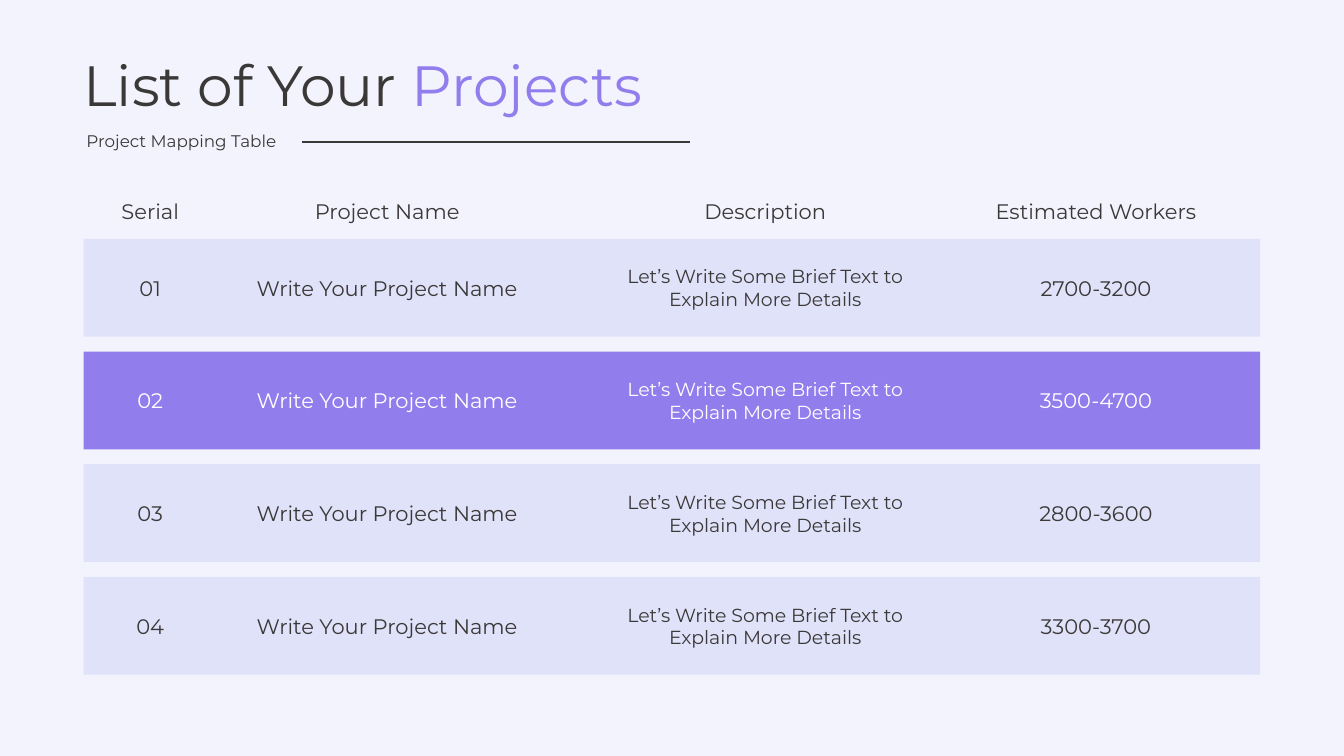
import pptx
import pptx.dml.color
import pptx.enum.shapes
import pptx.enum.text
import pptx.util
from lxml import etree
from pptx.util import Inches

COLORS = {
    "background": "F3F3FD",
    "ink": "3B3838",
    "accent": "917DEC",
    "row": "E0E2F9",
    "white": "FFFFFF",
}
FONT = "Montserrat"
# Centre and width of each column, measured from the left edge of the list
COLUMNS = [(0.66, 0.83), (3.01, 3.01), (6.76, 3.15), (10.04, 2.38)]
HEADINGS = ["Serial", "Project Name", "Description", "Estimated Workers"]
PROJECT_NAME = "Write Your Project Name"
DESCRIPTION = ["Let’s Write Some Brief Text to", "Explain More Details"]
WORKERS = ["2700-3200", "3500-4700", "2800-3600", "3300-3700"]
HIGHLIGHTED_ROW = 1
ROW_HEIGHT = 0.97
ROW_PITCH = 1.118
HEADING_HEIGHT = 0.35
HEADING_TO_ROWS = 0.45


def rgb(name):
    return pptx.dml.color.RGBColor.from_string(COLORS[name])


def add_text(shapes, box, lines, size, centered=False):
    """Add a text box; each line is a list of (text, colour name) runs."""
    frame = shapes.add_textbox(*map(Inches, box)).text_frame
    frame.word_wrap = False
    frame.vertical_anchor = pptx.enum.text.MSO_ANCHOR.MIDDLE
    for index, runs in enumerate(lines):
        paragraph = frame.paragraphs[0] if index == 0 else frame.add_paragraph()
        align = pptx.enum.text.PP_ALIGN
        paragraph.alignment = align.CENTER if centered else align.LEFT
        for text, color in runs:
            run = paragraph.add_run()
            run.text = text
            run.font.name = FONT
            run.font.size = pptx.util.Pt(size)
            run.font.color.rgb = rgb(color)


def add_header(slide, left, top):
    title = [("List of Your ", "ink"), ("Projects", "accent")]
    add_text(slide.shapes, (left, top, 6.32, 0.78), [title], 40.5)
    subtitle = [("Project Mapping Table", "ink")]
    add_text(slide.shapes, (left + 0.03, top + 0.81, 2.17, 0.3), [subtitle], 12)

    rule_y = Inches(top + 0.97)
    rule = slide.shapes.add_connector(
        pptx.enum.shapes.MSO_CONNECTOR.STRAIGHT,
        Inches(left + 2.27), rule_y, Inches(left + 6.11), rule_y)
    rule.line.color.rgb = rgb("ink")
    rule.line.width = pptx.util.Pt(1.5)
    properties = rule._element.spPr
    etree.SubElement(properties, pptx.oxml.ns.qn("a:effectLst"))


def add_cell(shapes, left, middle, column, lines, color):
    """Centre the lines in a column, around the given vertical middle."""
    center, width = COLUMNS[column]
    height, size = (0.35, 15) if len(lines) == 1 else (0.57, 13.5)
    box = (left + center - width / 2, middle - height / 2, width, height)
    add_text(shapes, box, [[(line, color)] for line in lines], size, centered=True)


def add_project_row(slide, left, top, width, cells, fill, ink):
    row = slide.shapes.add_group_shape()
    bar = row.shapes.add_shape(
        pptx.enum.shapes.MSO_SHAPE.RECTANGLE,
        *map(Inches, (left, top, width, ROW_HEIGHT)))
    bar.shadow.inherit = False
    bar.fill.solid()
    bar.fill.fore_color.rgb = rgb(fill)
    bar.line.fill.background()
    for column, lines in enumerate(cells):
        add_cell(row.shapes, left, top + ROW_HEIGHT / 2, column, lines, ink)


def add_project_list(slide, left, top, width):
    for column, heading in enumerate(HEADINGS):
        add_cell(slide.shapes, left, top + HEADING_HEIGHT / 2, column, [heading], "ink")
    for index, workers in enumerate(WORKERS):
        cells = [[f"{index + 1:02}"], [PROJECT_NAME], DESCRIPTION, [workers]]
        fill, ink = ("accent", "white") if index == HIGHLIGHTED_ROW else ("row", "ink")
        row_top = top + HEADING_TO_ROWS + index * ROW_PITCH
        add_project_row(slide, left, row_top, width, cells, fill, ink)


def main():
    deck = pptx.Presentation()
    deck.slide_width, deck.slide_height = Inches(13.33), Inches(7.5)
    slide = deck.slides.add_slide(deck.slide_layouts[6])
    slide.background.fill.solid()
    slide.background.fill.fore_color.rgb = rgb("background")
    add_header(slide, 0.73, 0.44)
    add_project_list(slide, 0.83, 1.92, 11.67)
    deck.save("out.pptx")


if __name__ == "__main__":
    main()
